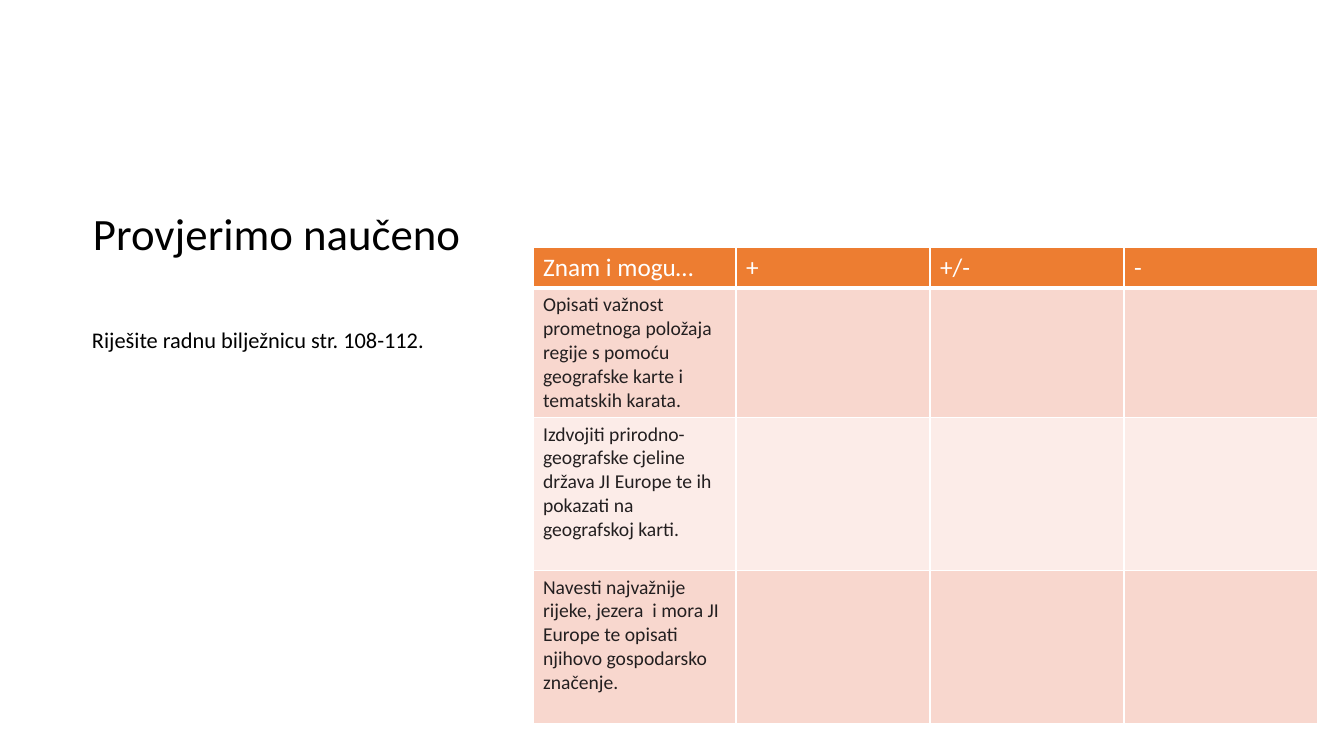
"""Build the review slide with its self-assessment table."""
from lxml import etree
from pptx import Presentation
from pptx import util as u
from pptx.dml.color import RGBColor
from pptx.enum import text
from pptx.oxml.ns import qn

PX = 9071.43
THEME = {
    "font": "Calibri", "black": "000000", "white": "FFFFFF", "ink": "231F20",
    "head": "ED7D31", "odd": "F8D7CE", "even": "FCECE8",
    "title": 32, "note": 16, "top": 18, "body": 14,
}


def px(n):
    return u.Emu(round(n * PX))


def write(frame, words, size, color):
    para = frame.paragraphs[0]
    run = para.add_run()
    run.text = words
    run.font.name = THEME["font"]
    run.font.size = u.Pt(THEME[size])
    run.font.color.rgb = RGBColor.from_string(THEME[color])
    return para


deck = Presentation()
deck.slide_width, deck.slide_height = px(1344), px(756)
slide = deck.slides.add_slide(deck.slide_layouts[5])

title = slide.shapes.title
title.left, title.top, title.width, title.height = px(93), px(212), px(433), px(100)
note = slide.shapes.add_textbox(px(92), px(329), px(433), px(226))
labels = (
    (title, "Provjerimo naučeno", "title"),
    (note, "Riješite radnu bilježnicu str. 108-112.", "note"),
)
for box, words, size in labels:
    frame = box.text_frame
    frame.word_wrap = True
    frame.auto_size = text.MSO_AUTO_SIZE.NONE
    frame.vertical_anchor = text.MSO_ANCHOR.TOP
    frame.margin_left = frame.margin_top = frame.margin_right = frame.margin_bottom = 0
    para = write(frame, words, size, "black")
    para.alignment = text.PP_ALIGN.LEFT
    para.line_spacing = 0.9

rows = (
    ("Znam i mogu…", "+", "+/-", "-"),
    ("Opisati važnost prometnoga položaja regije s pomoću geografske karte i tematskih karata.",),
    ("Izdvojiti prirodno-geografske cjeline država JI Europe te ih pokazati na geografskoj karti.",),
    ("Navesti najvažnije rijeke, jezera  i mora JI Europe te opisati njihovo gospodarsko značenje.",),
)
wide, high = (203, 194, 194, 194), (41, 129, 153, 153)
grid = slide.shapes.add_table(
    len(high), len(wide), px(533), px(247), px(sum(wide)), px(sum(high))
).table
for col, size in zip(grid.columns, wide):
    col.width = px(size)
for r, row in enumerate(rows):
    grid.rows[r].height = px(high[r])
    fill = "head" if r == 0 else "odd" if r % 2 else "even"
    size, color = ("top", "white") if r == 0 else ("body", "ink")
    for c in range(len(wide)):
        cell = grid.cell(r, c)
        props = cell._tc.get_or_add_tcPr()
        for side in "LRTB":
            thick = 3 if r == 0 and side == "B" else 1
            line = etree.SubElement(props, qn(f"a:ln{side}"), w=str(u.Pt(thick)))
            solid = etree.SubElement(line, qn("a:solidFill"))
            etree.SubElement(solid, qn("a:srgbClr"), val=THEME["white"])
        cell.fill.solid()
        cell.fill.fore_color.rgb = RGBColor.from_string(THEME[fill])
        if c < len(row):
            write(cell.text_frame, row[c], size, color).runs[0].font.bold = False

deck.save("out.pptx")
